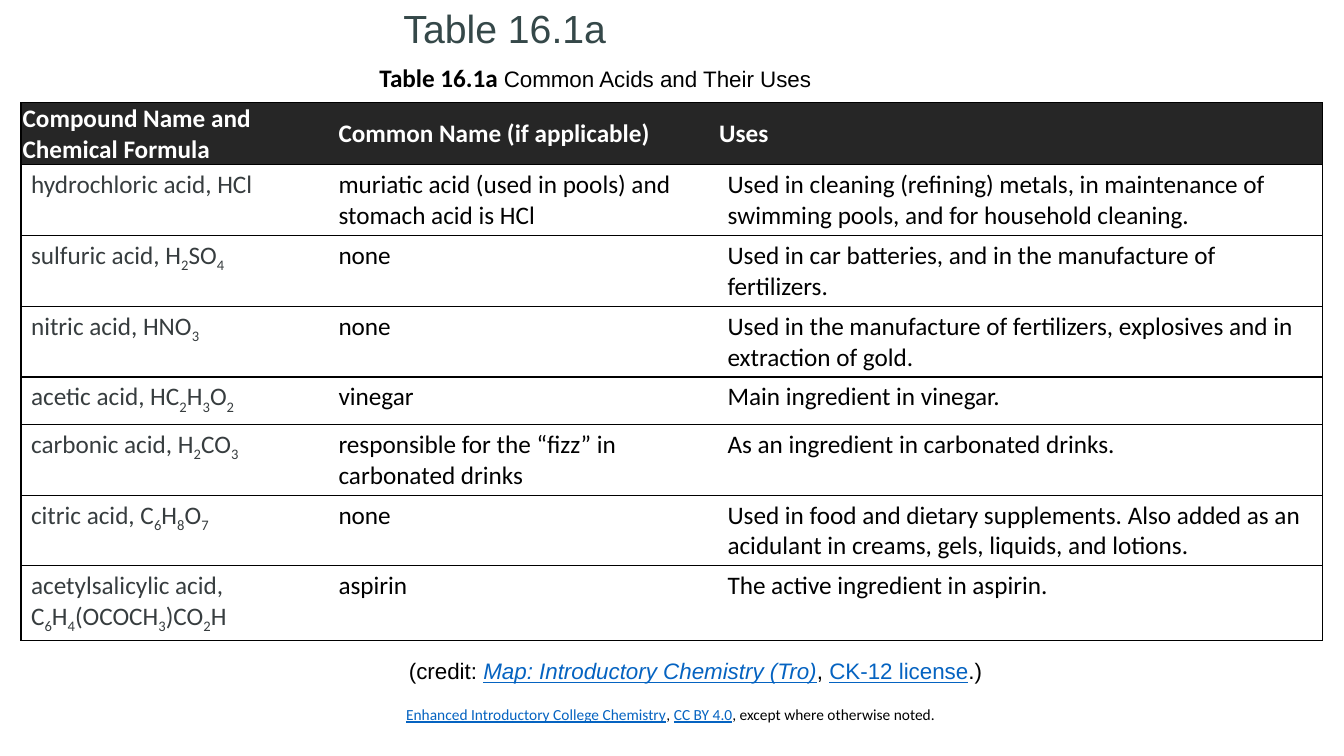
from itertools import groupby

from lxml import etree
from pptx import Presentation
from pptx.dml.color import RGBColor
from pptx.enum.text import MSO_ANCHOR, MSO_AUTO_SIZE, PP_ALIGN
from pptx.oxml.ns import qn
from pptx.util import Pt

LEFT = PP_ALIGN.LEFT
TOP, MIDDLE, BOTTOM = MSO_ANCHOR.TOP, MSO_ANCHOR.MIDDLE, MSO_ANCHOR.BOTTOM
NO_FIT = MSO_AUTO_SIZE.NONE

COLORS = {
    "black": "000000",
    "white": "FFFFFF",
    "head": "262626",
    "slate": "373D3F",
    "title": "354849",
    "link": "0563C1",
}
HEADS = ["Compound Name and Chemical Formula", "Common Name (if applicable)", "Uses"]
ACIDS = [
    ["hydrochloric acid, HCl", "muriatic acid (used in pools) and stomach acid is HCl",
     "Used in cleaning (refining) metals, in maintenance of swimming pools, and for household cleaning."],
    ["sulfuric acid, H2SO4", "none",
     "Used in car batteries, and in the manufacture of fertilizers."],
    ["nitric acid, HNO3", "none",
     "Used in the manufacture of fertilizers, explosives and in extraction of gold."],
    ["acetic acid, HC2H3O2", "vinegar", "Main ingredient in vinegar."],
    ["carbonic acid, H2CO3", "responsible for the “fizz” in carbonated drinks",
     "As an ingredient in carbonated drinks."],
    ["citric acid, C6H8O7", "none",
     "Used in food and dietary supplements. Also added as an acidulant in creams, gels, liquids, and lotions."],
    ["acetylsalicylic acid, C6H4(OCOCH3)CO2H", "aspirin",
     "The active ingredient in aspirin."],
]
WIDTHS = [219.6, 277.9, 432.2]
HEIGHTS = [44.5, 50.5, 50.5, 50.5, 34, 50.5, 50.5, 53.5]
LINK = {"color": "link", "underline": True}


class Deck:
    def __init__(self):
        self.file = Presentation()
        self.file.slide_width, self.file.slide_height = Pt(960), Pt(540)
        self.slide = self.file.slides.add_slide(self.file.slide_layouts[5])

    def style(self, font, color=None, size=None, name=None, **flags):
        if color:
            font.color.rgb = RGBColor.from_string(COLORS[color])
        if size:
            font.size = Pt(size)
        if name:
            font.name = name
        for flag, value in flags.items():
            setattr(font, flag, value)

    def title(self, text, left, top, width, height):
        box = self.slide.shapes.title
        box.left, box.top, box.width, box.height = map(Pt, (left, top, width, height))
        frame = box.text_frame
        frame.text = text
        frame.auto_size = NO_FIT
        frame.vertical_anchor = BOTTOM
        para = frame.paragraphs[0]
        para.alignment = LEFT
        para.line_spacing = 0.9
        self.style(para.font, "title", 28, "Arial")

    def text(self, runs, left, top, width, height, **base):
        box = self.slide.shapes.add_textbox(*map(Pt, (left, top, width, height)))
        box.text_frame.word_wrap = True
        para = box.text_frame.paragraphs[0]
        self.style(para.font, **base)
        for words, look in runs:
            run = para.add_run()
            run.text = words
            self.style(run.font, **{**base, **look})

    def edge(self, cell, side, color=None):
        line = etree.SubElement(cell._tc.get_or_add_tcPr(), qn(f"a:ln{side}"), w=str(Pt(1)))
        if color:
            fill = etree.SubElement(line, qn("a:solidFill"))
            etree.SubElement(fill, qn("a:srgbClr"), val=COLORS[color])
        else:
            etree.SubElement(line, qn("a:noFill"))

    def cell(self, cell, text, fill, color, bold, sides, subs):
        for side in "LRTB":
            self.edge(cell, side, "black" if side in sides else None)
        cell.fill.solid()
        cell.fill.fore_color.rgb = RGBColor.from_string(COLORS[fill])
        para = cell.text_frame.paragraphs[0]
        self.style(para.font, color, 18, "Calibri", bold=bold)
        parts = groupby(text, str.isdigit) if subs else [(False, text)]
        for low, chars in parts:
            run = para.add_run()
            run.text = "".join(chars)
            if low:
                run._r.get_or_add_rPr().set("baseline", "-25000")

    def table(self, rows, left, top):
        size = (left, top, sum(WIDTHS), sum(HEIGHTS))
        grid = self.slide.shapes.add_table(len(rows), len(WIDTHS), *map(Pt, size)).table
        grid.horz_banding = False
        for col, width in zip(grid.columns, WIDTHS):
            col.width = Pt(width)
        for r, row in enumerate(rows):
            grid.rows[r].height = Pt(HEIGHTS[r])
            head = r == 0
            for c, text in enumerate(row):
                cell = grid.cell(r, c)
                color = "white" if head else "black" if c else "slate"
                self.cell(cell, text, "head" if head else "white", color, head,
                          ("LTB", "TB", "RTB")[c], c == 0 and not head)
                cell.vertical_anchor = MIDDLE if head and c else TOP
                if head and c != 1:
                    cell.margin_left = cell.margin_right = Pt(1.2)
                    cell.margin_top = cell.margin_bottom = Pt(0.6)


def main():
    deck = Deck()
    deck.title("Table 16.1a", 281, -9.5, 163.5, 50.5)
    deck.text([("Table 16.1a ", {"size": 18, "name": "Calibri", "bold": True}),
               ("Common Acids and Their Uses", {})],
              264, 41, 584, 29, color="black", size=16, name="Arial")
    deck.table([HEADS] + ACIDS, 15, 73.3)
    deck.text([("(credit: ", {}),
               ("Map: Introductory Chemistry (Tro)", {**LINK, "italic": True}),
               (", ", {}), ("CK-12 license", LINK), (".)", {})],
              285, 466, 443, 26.5, color="black", size=16, name="Arial")
    deck.text([("Enhanced Introductory College Chemistry", LINK), (", ", {}),
               ("CC BY 4.0", LINK), (", except where otherwise noted.", {})],
              283, 500, 509, 29, color="black", size=11, name="Calibri")
    deck.file.save("out.pptx")


if __name__ == "__main__":
    main()
